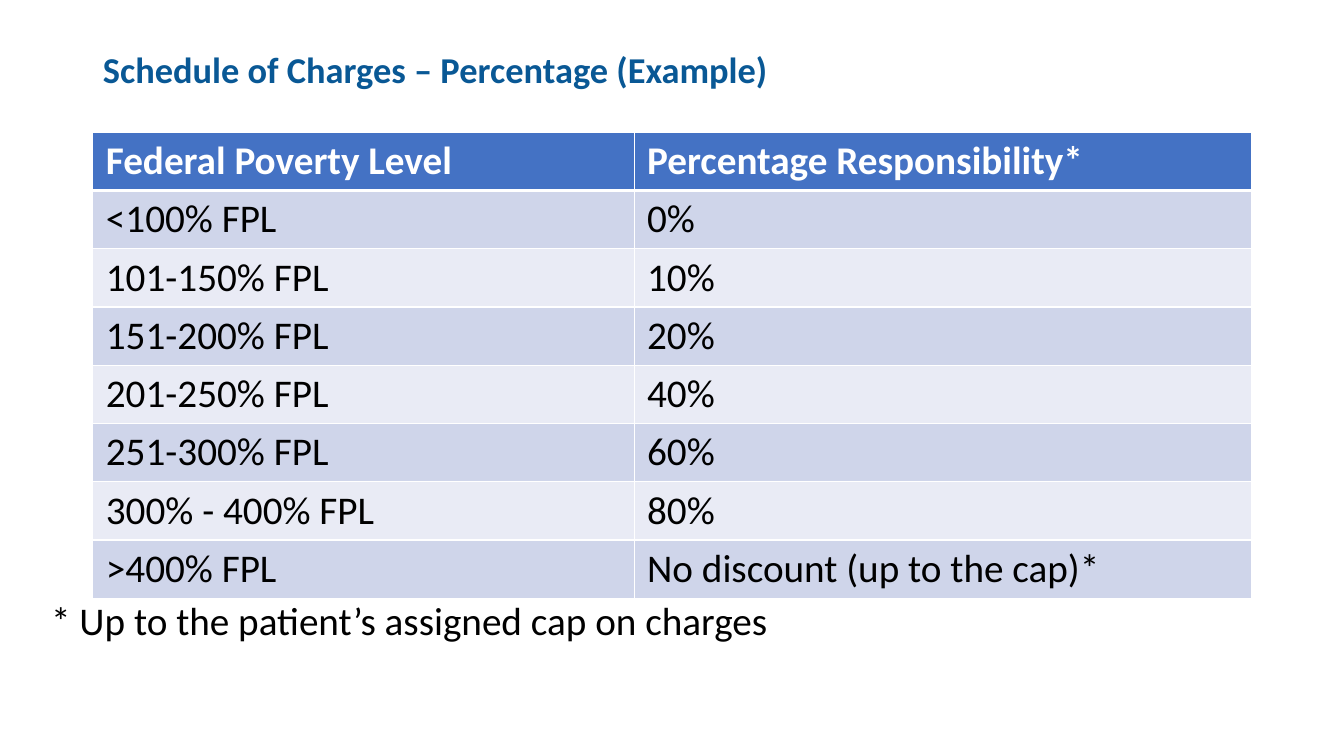
from dataclasses import dataclass

from lxml import etree
from pptx import Presentation
from pptx.dml.color import RGBColor
from pptx.enum.text import MSO_ANCHOR, MSO_AUTO_SIZE, PP_ALIGN
from pptx.oxml.ns import qn
from pptx.util import Cm, Pt

LEFT = PP_ALIGN.LEFT
MIDDLE = MSO_ANCHOR.MIDDLE
TOP = MSO_ANCHOR.TOP
FIXED = MSO_AUTO_SIZE.NONE
GROW = MSO_AUTO_SIZE.SHAPE_TO_FIT_TEXT


@dataclass(frozen=True)
class Theme:
    font: str = "Calibri"
    title: str = "095895"
    head: str = "4472C4"
    odd: str = "CFD5EA"
    even: str = "E9EBF5"
    white: str = "FFFFFF"
    ink: str = "000000"
    large: int = 28
    medium: int = 26
    thin: int = 1
    thick: int = 3


THEME = Theme()
RATES = [
    ("Federal Poverty Level", "Percentage Responsibility*"),
    ("<100% FPL", "0%"),
    ("101-150% FPL", "10%"),
    ("151-200% FPL", "20%"),
    ("201-250% FPL", "40%"),
    ("251-300% FPL", "60%"),
    ("300% - 400% FPL", "80%"),
    (">400% FPL", "No discount (up to the cap)*"),
]


def add_run(para, text, size, color, bold=False):
    para.alignment = LEFT
    run = para.add_run()
    run.text = text
    font = run.font
    font.name = THEME.font
    font.size = Pt(size)
    font.bold = bold
    font.color.rgb = RGBColor.from_string(color)


def add_edge(cell, side, width):
    props = cell._tc.get_or_add_tcPr()
    line = etree.SubElement(props, qn("a:ln" + side), w=str(Pt(width)))
    fill = etree.SubElement(line, qn("a:solidFill"))
    etree.SubElement(fill, qn("a:srgbClr"), val=THEME.white)


def add_title(slide, left, top, width, height):
    title = slide.shapes.title
    title.left, title.top = Cm(left), Cm(top)
    title.width, title.height = Cm(width), Cm(height)
    frame = title.text_frame
    frame.word_wrap = True
    frame.auto_size = FIXED
    frame.vertical_anchor = MIDDLE
    para = frame.paragraphs[0]
    para.line_spacing = 0.9
    add_run(para, "Schedule of Charges – Percentage (Example)",
            THEME.medium, THEME.title, True)


def fill_cell(cell, text, row):
    head = row == 0
    heavy = {0: "B", 1: "T"}.get(row)
    for side in "LRTB":
        add_edge(cell, side, THEME.thick if side == heavy else THEME.thin)
    color = THEME.head if head else (THEME.odd if row % 2 else THEME.even)
    cell.fill.solid()
    cell.fill.fore_color.rgb = RGBColor.from_string(color)
    cell.margin_left = cell.margin_right = Cm(0.33)
    cell.margin_top = cell.margin_bottom = Cm(0.13)
    cell.vertical_anchor = TOP
    add_run(cell.text_frame.paragraphs[0], text, THEME.large,
            THEME.white if head else THEME.ink, head)


def add_rates(slide, left, top, width, height):
    frame = slide.shapes.add_table(len(RATES), 2, Cm(left), Cm(top),
                                   Cm(width), Cm(height))
    table = frame.table
    first = 13.64
    for col, size in zip(table.columns, (first, width - first)):
        col.width = Cm(size)
    for row, texts in enumerate(RATES):
        table.rows[row].height = Cm(height / len(RATES))
        for col, text in enumerate(texts):
            fill_cell(table.cell(row, col), text, row)


def add_note(slide, left, top, width, height):
    box = slide.shapes.add_textbox(Cm(left), Cm(top), Cm(width), Cm(height))
    frame = box.text_frame
    frame.word_wrap = True
    frame.auto_size = GROW
    add_run(frame.paragraphs[0], "* Up to the patient’s assigned cap on charges",
            THEME.large, THEME.ink)


def main():
    deck = Presentation()
    deck.slide_width, deck.slide_height = Cm(33.87), Cm(19.05)
    slide = deck.slides.add_slide(deck.slide_layouts[5])
    left, width = 2.34, 29.21
    add_title(slide, left, 0.66, width, 2.31)
    add_rates(slide, left, 3.33, width, 11.68)
    add_note(slide, 1.04, 14.91, 31.9, 1.45)
    deck.save("out.pptx")


if __name__ == "__main__":
    main()
